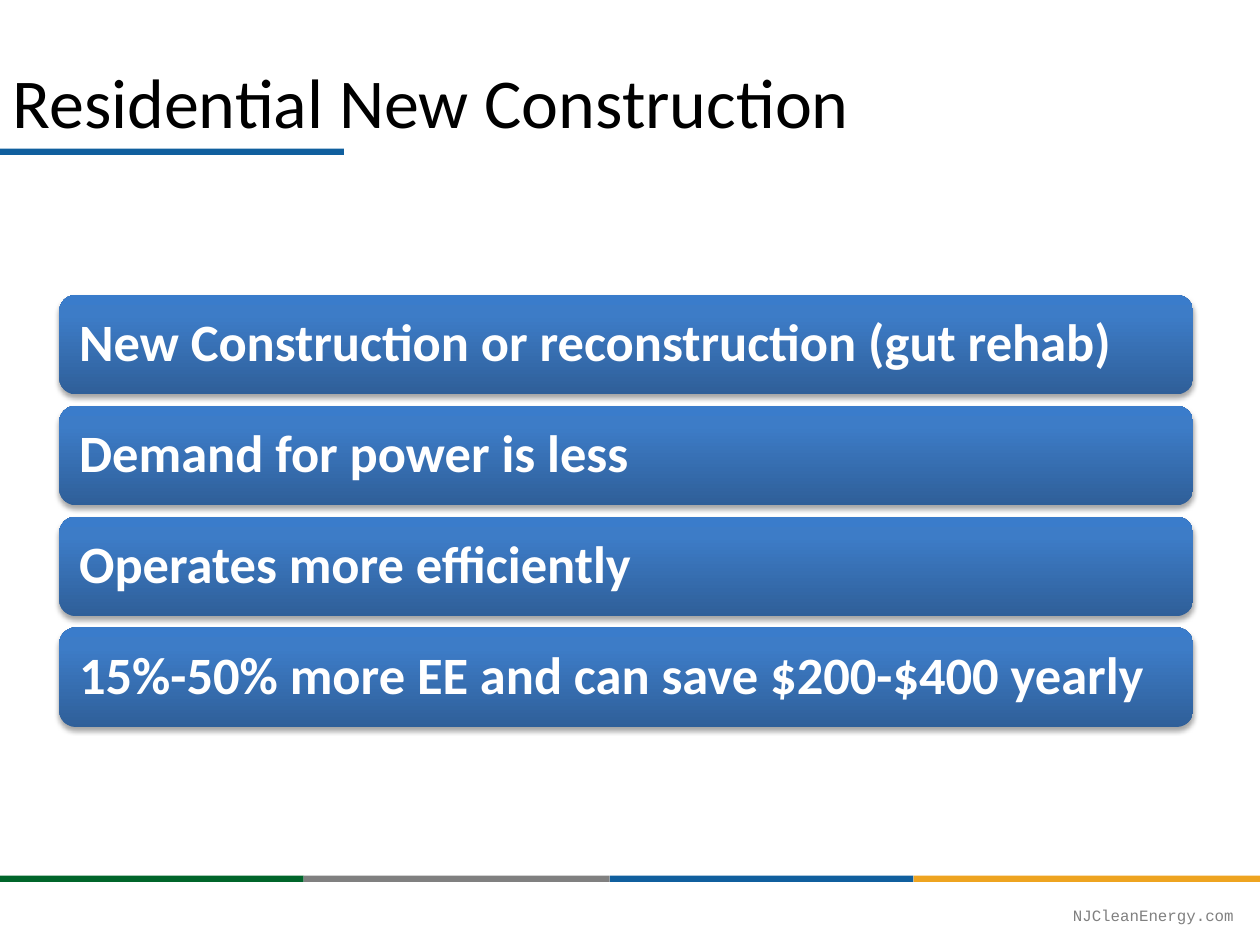
from copy import deepcopy
from itertools import pairwise

from lxml import etree
from pptx import Presentation
from pptx.dml.color import RGBColor
from pptx.enum.shapes import MSO_SHAPE as Shape
from pptx.enum.text import MSO_ANCHOR as Anchor, PP_ALIGN as Align
from pptx.oxml import parse_xml
from pptx.oxml.ns import nsdecls, qn
from pptx.util import Inches, Pt

BLUE, GREY = "105F9E", "808080"
BAR_GRADIENT = [(0, "2F5F99"), (0.8, "3D7CC7"), (1, "3A7CCB")]
POINTS = [
    "New Construction or reconstruction (gut rehab)",
    "Demand for power is less",
    "Operates more efficiently",
    "15%-50% more EE and can save $200-$400 yearly",
]


def rgb(value):
    return RGBColor.from_string(value)


def write(tf, text, size=30, color="000000", font="Calibri", bold=False,
          align=Align.LEFT, anchor=Anchor.MIDDLE, spacing=1.0, inset=0.1):
    tf.word_wrap = True
    tf.vertical_anchor = anchor
    tf.margin_left = tf.margin_right = Inches(inset)
    tf.margin_top = tf.margin_bottom = Inches(min(inset, 0.12))
    p = tf.paragraphs[0]
    p.alignment = align
    p.line_spacing = spacing
    r = p.add_run()
    r.text = text
    r.font.name, r.font.size, r.font.bold = font, Pt(size), bold
    r.font.color.rgb = rgb(color)


def add_box(slide, kind, left, top, width, height):
    sp = slide.shapes.add_shape(
        kind, Inches(left), Inches(top), Inches(width), Inches(height))
    sp.line.fill.background()
    sp.shadow.inherit = False
    return sp


def add_stripe(slide, left, top, width, color):
    sp = add_box(slide, Shape.RECTANGLE, left, top, width, 0.05)
    sp.fill.solid()
    sp.fill.fore_color.rgb = rgb(color)


def fill_gradient(sp, stops):
    """Fill from bottom to top with (position, colour) stops."""
    sp.fill.gradient()
    sp.fill.gradient_angle = 90
    gs_list = sp._element.spPr.find(".//" + qn("a:gsLst"))
    while len(gs_list) < len(stops):
        gs_list.append(deepcopy(gs_list[0]))
    for stop, (position, color) in zip(sp.fill.gradient_stops, stops):
        stop.position = position
        stop.color.rgb = rgb(color)


def add_shadow(sp):
    effects = sp._element.spPr.find(qn("a:effectLst"))
    shadow = parse_xml(
        f'<a:outerShdw {nsdecls("a")} blurRad="{Pt(3.1)}" dist="{Pt(1.8)}" '
        'dir="5400000" rotWithShape="0"/>')
    color = etree.SubElement(shadow, qn("a:srgbClr"), val="000000")
    etree.SubElement(color, qn("a:alpha"), val="35000")
    effects.append(shadow)


def add_header(slide, left, top, width, height):
    title = slide.shapes.title
    title.left, title.top = Inches(left), Inches(top)
    title.width, title.height = Inches(width), Inches(height)
    write(title.text_frame, "Residential New Construction", size=40)
    add_stripe(slide, left, top + 1.01, 2.73, BLUE)


def add_bars(slide, left, top, width, height, gap=0.09):
    bar_height = (height - gap * (len(POINTS) - 1)) / len(POINTS)
    for i, point in enumerate(POINTS):
        sp = add_box(slide, Shape.ROUNDED_RECTANGLE, left,
                     top + i * (bar_height + gap), width, bar_height)
        fill_gradient(sp, BAR_GRADIENT)
        add_shadow(sp)
        write(sp.text_frame, point, color="FFFFFF", bold=True,
              spacing=0.9, inset=0.12)


def add_footer(slide, left, top, width):
    edges = [left, left + 2.41, left + 4.84, left + 7.25, left + width]
    colors = ["00652A", GREY, BLUE, "EEA420"]
    for (start, end), color in zip(pairwise(edges), colors):
        add_stripe(slide, start, top, end - start, color)
    address = slide.shapes.add_textbox(
        Inches(left - 0.21), Inches(top + 0.21), Inches(width), Inches(0.17))
    write(address.text_frame, "NJCleanEnergy.com", size=9, color=GREY,
          font="Courier New", align=Align.RIGHT, anchor=Anchor.TOP,
          spacing=1.2, inset=0)


def main():
    prs = Presentation()
    prs.slide_width, prs.slide_height = Inches(10), Inches(7.5)
    slide = prs.slides.add_slide(prs.slide_layouts[5])
    add_footer(slide, 0, 6.95, 10)
    add_header(slide, 0, 0.17, 9, 1.25)
    add_bars(slide, 0.47, 2.34, 9, 3.43)
    prs.save("out.pptx")


if __name__ == "__main__":
    main()
